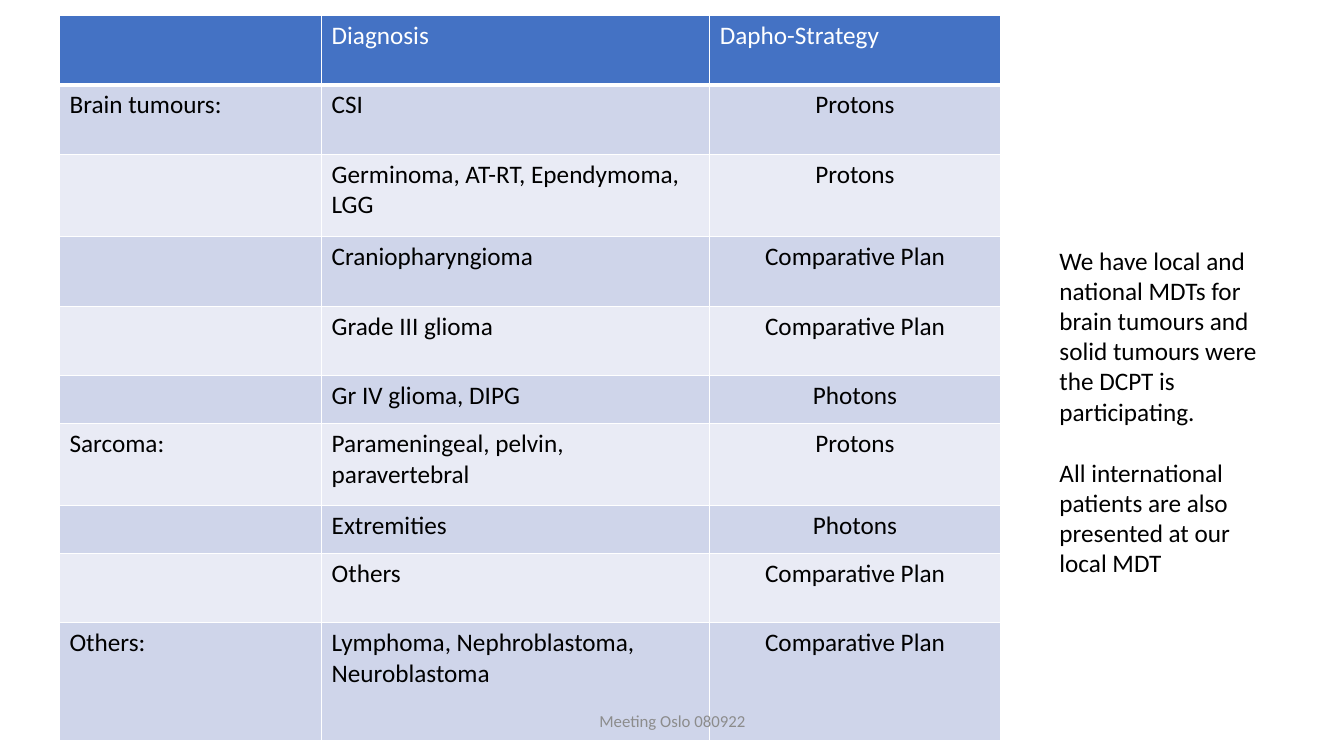
from lxml.etree import SubElement
from pptx import Presentation
from pptx.dml.color import RGBColor
from pptx.enum.text import MSO_ANCHOR, PP_ALIGN
from pptx.oxml.ns import qn
from pptx.util import Inches, Pt

WHITE = RGBColor(0xFF, 0xFF, 0xFF)
BLACK = RGBColor(0, 0, 0)
GREY = RGBColor(0x8C, 0x8C, 0x8C)
BLUE = RGBColor(0x44, 0x72, 0xC4)
BANDS = [RGBColor(0xE9, 0xEB, 0xF5), RGBColor(0xCF, 0xD5, 0xEA)]

COLUMNS = [2.6, 3.85, 2.88]
SHORT, MEDIUM, TALL, LAST = 0.47, 0.69, 0.82, 1.17
ROWS = [
    (MEDIUM, "", "Diagnosis", "Dapho-Strategy"),
    (MEDIUM, "Brain tumours:", "CSI", "Protons"),
    (TALL, "", "Germinoma, AT-RT, Ependymoma, LGG", "Protons"),
    (MEDIUM, "", "Craniopharyngioma", "Comparative Plan"),
    (MEDIUM, "", "Grade III glioma", "Comparative Plan"),
    (SHORT, "", "Gr IV glioma, DIPG", "Photons"),
    (TALL, "Sarcoma:", "Parameningeal, pelvin, paravertebral", "Protons"),
    (SHORT, "", "Extremities", "Photons"),
    (MEDIUM, "", "Others", "Comparative Plan"),
    (LAST, "Others:", "Lymphoma, Nephroblastoma, Neuroblastoma", "Comparative Plan"),
]
MDT_NOTES = [
    "We have local and national MDTs for brain tumours and solid tumours "
    "were the DCPT is participating.",
    "All international patients are also presented at our local MDT",
]


def style(p, size, color, align=PP_ALIGN.LEFT):
    p.alignment = align
    p.font.name = "Calibri"
    p.font.size = Pt(size)
    p.font.bold = False
    p.font.color.rgb = color


def add_borders(cell, bottom):
    tcPr = cell._tc.get_or_add_tcPr()
    for side, width in (("L", 1), ("R", 1), ("T", 1), ("B", bottom)):
        ln = SubElement(tcPr, qn(f"a:ln{side}"), w=str(Pt(width)))
        fill = SubElement(ln, qn("a:solidFill"))
        SubElement(fill, qn("a:srgbClr"), val=str(WHITE))


def add_strategy_table(slide, left, top):
    height = sum(row[0] for row in ROWS)
    table = slide.shapes.add_table(
        len(ROWS), len(COLUMNS), Inches(left), Inches(top),
        Inches(sum(COLUMNS)), Inches(height)).table
    for column, width in zip(table.columns, COLUMNS):
        column.width = Inches(width)
    for i, (row_height, *texts) in enumerate(ROWS):
        table.rows[i].height = Inches(row_height)
        header = i == 0
        for j, text in enumerate(texts):
            cell = table.cell(i, j)
            add_borders(cell, 3 if header else 1)
            cell.fill.solid()
            cell.fill.fore_color.rgb = BLUE if header else BANDS[i % 2]
            cell.text = text
            centred = j == 2 and not header
            style(cell.text_frame.paragraphs[0], 18, WHITE if header else BLACK,
                  PP_ALIGN.CENTER if centred else PP_ALIGN.LEFT)


def add_text(slide, box, texts, size, color, align=PP_ALIGN.LEFT,
             anchor=MSO_ANCHOR.TOP, gap=0):
    tf = slide.shapes.add_textbox(*map(Inches, box)).text_frame
    tf.word_wrap = True
    tf.vertical_anchor = anchor
    for i, text in enumerate(texts):
        p = tf.add_paragraph() if i else tf.paragraphs[0]
        p.text = text
        style(p, size, color, align)
        if i:
            p.space_before = Pt(gap)


def main():
    prs = Presentation()
    prs.slide_width, prs.slide_height = Inches(13.33), Inches(7.5)
    slide = prs.slides.add_slide(prs.slide_layouts[6])
    add_strategy_table(slide, 0.59, 0.15)
    add_text(slide, (10.41, 2.38, 2.33, 3.43), MDT_NOTES, 18, BLACK, gap=22)
    add_text(slide, (4.42, 6.95, 4.5, 0.4), ["Meeting Oslo 080922"], 12, GREY,
             PP_ALIGN.CENTER, MSO_ANCHOR.MIDDLE)
    prs.save("out.pptx")


if __name__ == "__main__":
    main()
